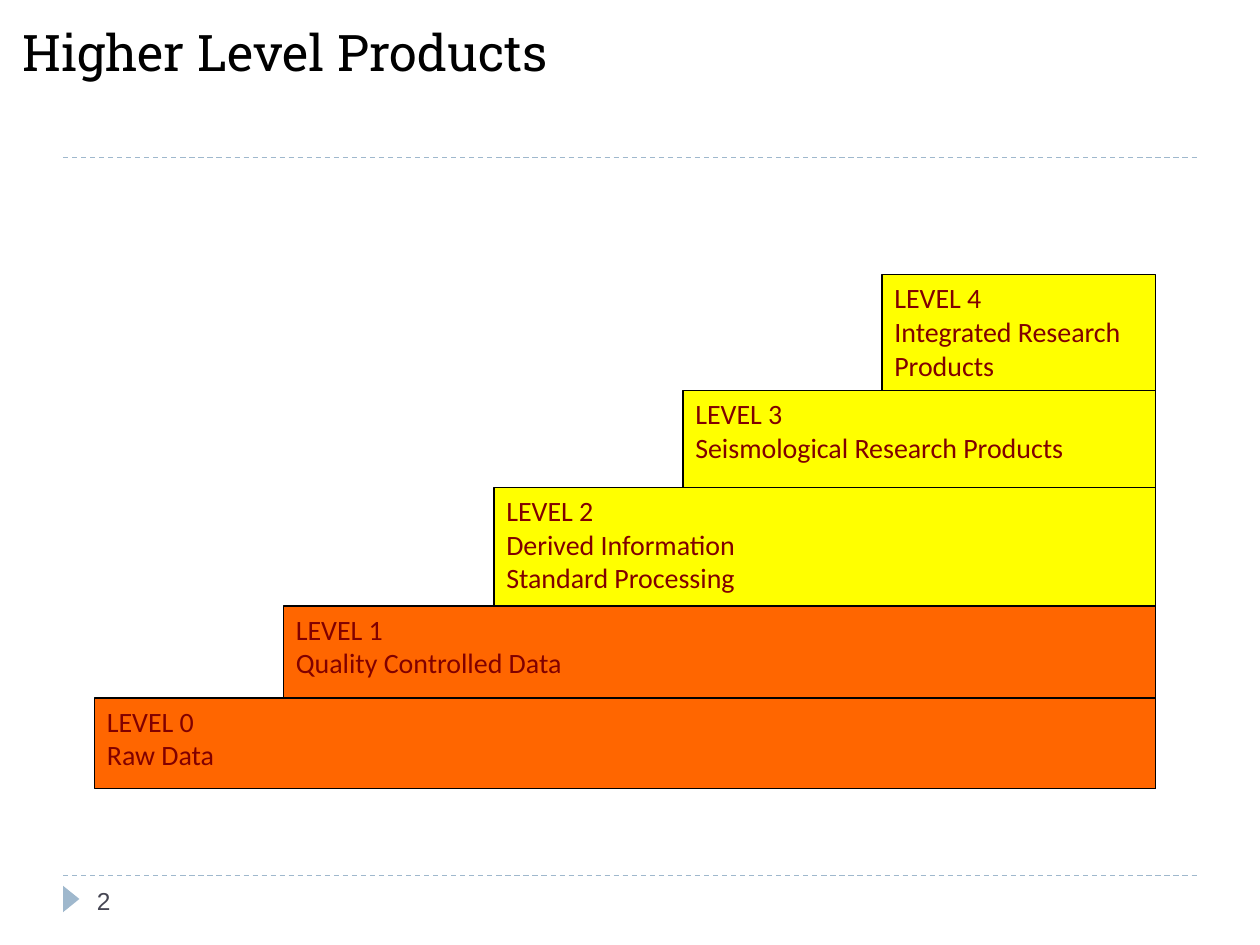
from lxml import etree
from pptx import Presentation
from pptx import util as u
from pptx.dml.color import RGBColor
from pptx.enum import dml, shapes, text
from pptx.oxml.ns import qn

WIDTH, HEIGHT = 10, 7.5
COLORS = {
    "rule": "9FB8CD",
    "research": "FFFF00",
    "data": "FF6600",
    "outline": "000000",
    "title": "000000",
    "level": "800000",
    "number": "464653",
}
STAIR_RIGHT, STAIR_BOTTOM = 9.17, 6.26
# Left edge, top edge, fill and lines of each step, from back to front
STEPS = [
    (7, 2.18, "research", ["LEVEL 4", "Integrated Research Products"]),
    (5.42, 3.1, "research", ["LEVEL 3", "Seismological Research Products"]),
    (3.92, 3.87, "research", ["LEVEL 2", "Derived Information", "Standard Processing"]),
    (2.25, 4.81, "data", ["LEVEL 1", "Quality Controlled Data"]),
    (0.75, 5.54, "data", ["LEVEL 0", "Raw Data"]),
]


def color(name):
    return RGBColor.from_string(COLORS[name])


def inches(*lengths):
    return [u.Inches(length) for length in lengths]


def write(shape, lines, font, size, ink, anchor=text.MSO_ANCHOR.TOP):
    frame = shape.text_frame
    frame.word_wrap = True
    frame.vertical_anchor = anchor
    frame.text = "\n".join(lines)
    for para in frame.paragraphs:
        para.alignment = text.PP_ALIGN.LEFT
        for span in para.runs:
            span.font.name = font
            span.font.size = u.Pt(size)
            span.font.color.rgb = color(ink)


def add_rule(page, top):
    margin = 0.05 * WIDTH
    rule = page.shapes.add_connector(
        shapes.MSO_CONNECTOR.STRAIGHT, *inches(margin, top, WIDTH - margin, top))
    rule.line.color.rgb = color("rule")
    rule.line.width = u.Pt(0.75)
    rule.line.dash_style = dml.MSO_LINE.DASH
    etree.SubElement(rule.line._get_or_add_ln().getparent(), qn("a:effectLst"))


def add_filled(page, kind, box, fill):
    shape = page.shapes.add_shape(kind, *inches(*box))
    shape.shadow.inherit = False
    shape.fill.solid()
    shape.fill.fore_color.rgb = color(fill)
    return shape


def add_marker(page):
    marker = add_filled(page, shapes.MSO_SHAPE.ISOSCELES_TRIANGLE,
                        (0.46, 7.07, 0.21, 0.13), "rule")
    marker.line.fill.background()
    marker.rotation = 90


def add_step(page, left, top, fill, lines):
    box = (left, top, STAIR_RIGHT - left, STAIR_BOTTOM - top)
    step = add_filled(page, shapes.MSO_SHAPE.RECTANGLE, box, fill)
    step.line.color.rgb = color("outline")
    step.line.width = u.Pt(0.75)
    write(step, lines, "Calibri", 16, "level")


def add_label(page, box, *style):
    write(page.shapes.add_textbox(*inches(*box)), *style)


def main():
    deck = Presentation()
    deck.slide_width, deck.slide_height = inches(WIDTH, HEIGHT)
    page = deck.slides.add_slide(deck.slide_layouts[6])

    # Frame of the page
    for top in (6.95, 1.25):
        add_rule(page, top)
    add_marker(page)

    # Title and page number
    add_label(page, (0.08, 0.12, 9, 0.7),
              ["Higher Level Products"], "Roboto Slab", 28.8, "title")
    add_label(page, (0.67, 6.95, 2.17, 0.4),
              ["2"], "Arial", 14, "number", text.MSO_ANCHOR.MIDDLE)

    # Staircase of product levels
    for step in STEPS:
        add_step(page, *step)

    deck.save("out.pptx")


if __name__ == "__main__":
    main()
